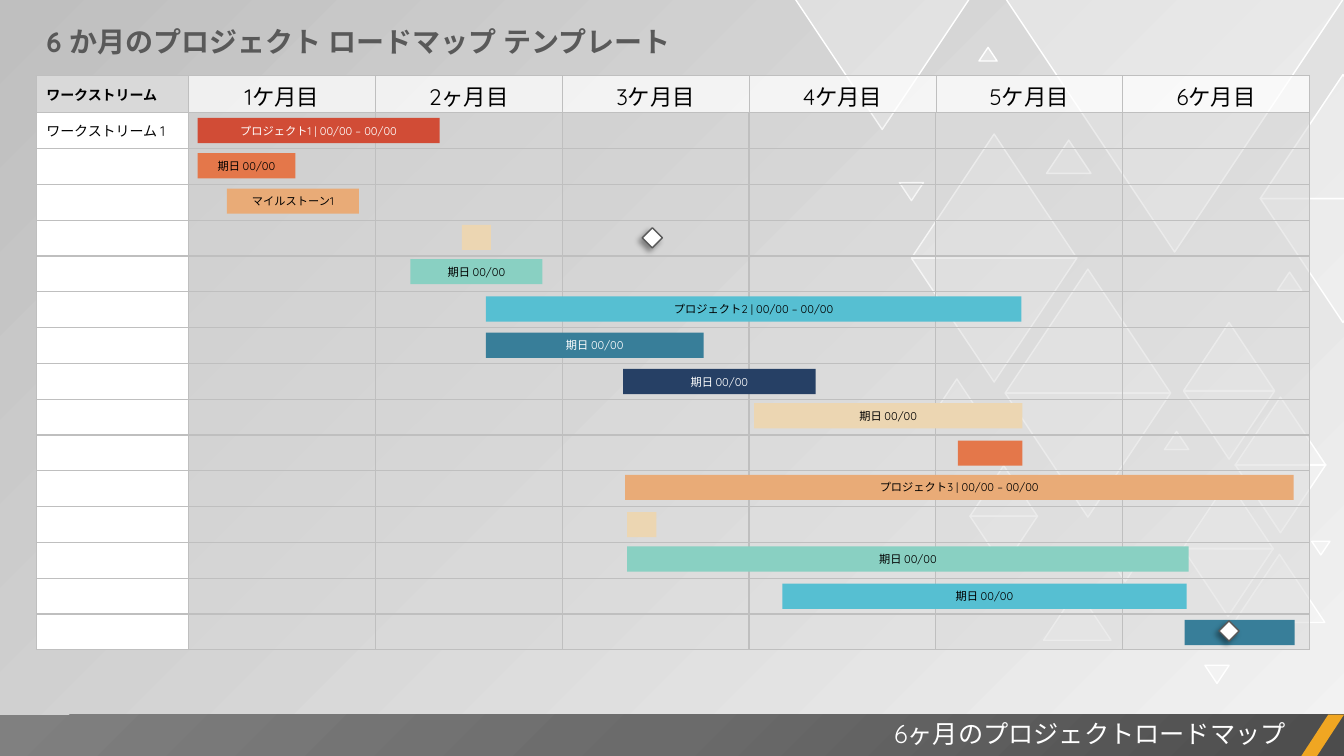
from copy import deepcopy
from dataclasses import dataclass

from lxml.etree import SubElement
from pptx import Presentation
from pptx.dml.color import RGBColor
from pptx.enum.shapes import MSO_SHAPE
from pptx.enum.text import MSO_ANCHOR, MSO_AUTO_SIZE, PP_ALIGN
from pptx.oxml.ns import qn
from pptx.util import Inches, Pt


@dataclass(frozen=True)
class Theme:
    font: str = "Quicksand"
    white: str = "FFFFFF"
    black: str = "000000"
    title: str = "595959"
    grid: str = "BFBFBF"
    cell: str = "D9D9D9"
    page_light: str = "F2F2F2"
    footer: tuple = ("4C4C4C", "6B6B6B", "808080")
    accent: str = "F0A622"
    red: str = "D14C36"
    orange: str = "E4774A"
    apricot: str = "E9AB77"
    sand: str = "ECD6B2"
    mint: str = "89D0C2"
    sky: str = "56BFD2"
    teal: str = "387E99"
    navy: str = "264065"
    title_size: int = 20
    footer_size: int = 18
    month_size: int = 16
    label_size: int = 10
    bar_size: int = 8


THEME = Theme()
MONTHS = ["1ケ月目", "2ヶ月目", "3ケ月目", "4ケ月目", "5ケ月目", "6ケ月目"]
MONTH_OPACITY = [50, 50, 25, 25, 50, 50]
WORKSTREAMS = 15
DUE = "期日 00/00"

# left, top, width, colour, label, label colour
BARS = [
    (1.96, 1.17, 2.4, THEME.red, "プロジェクト1 | 00/00 – 00/00", THEME.white),
    (1.96, 1.52, 0.97, THEME.orange, DUE, THEME.black),
    (2.25, 1.87, 1.31, THEME.apricot, "マイルストーン1", THEME.black),
    (4.58, 2.23, 0.29, THEME.sand, "", THEME.black),
    (4.07, 2.57, 1.31, THEME.mint, DUE, THEME.black),
    (4.82, 2.94, 5.31, THEME.sky, "プロジェクト2 | 00/00 – 00/00", THEME.black),
    (4.82, 3.3, 2.16, THEME.teal, DUE, THEME.white),
    (6.18, 3.66, 1.91, THEME.navy, DUE, THEME.white),
    (7.48, 4.0, 2.66, THEME.sand, DUE, THEME.black),
    (9.5, 4.37, 0.64, THEME.orange, "", THEME.black),
    (6.2, 4.71, 6.63, THEME.apricot, "プロジェクト3 | 00/00 – 00/00", THEME.black),
    (6.22, 5.08, 0.29, THEME.sand, "", THEME.black),
    (6.22, 5.42, 5.57, THEME.mint, DUE, THEME.black),
    (7.76, 5.79, 4.01, THEME.sky, DUE, THEME.black),
    (11.75, 6.15, 1.09, THEME.teal, "", THEME.black),
]
MILESTONES = [(6.37, 2.26), (12.09, 6.16)]

# left, top, width
UP_TRIANGLES = [
    (9.04, 1.33, 1.64), (9.97, 2.67, 1.64), (12.24, 5.5, 0.9), (11.73, 4.77, 0.9),
    (11.74, 3.2, 0.9), (12.25, 3.94, 0.9), (10.35, 5.85, 0.67), (9.62, 4.62, 0.67),
    (12.5, 0.74, 1.64), (9.27, 3.76, 0.44), (11.55, 4.28, 0.24), (12.67, 2.7, 0.24),
    (9.71, 0.47, 0.18), (10.38, 1.39, 0.44),
]
DOWN_TRIANGLES = [
    (9.04, 2.56, 1.64), (9.97, 3.9, 1.64), (9.97, -0.02, 3.36), (11.73, 5.44, 0.9),
    (11.74, 3.88, 0.9), (12.25, 4.61, 0.9), (9.62, 5.12, 0.67), (12.5, 1.97, 1.64),
    (10.94, 5.44, 0.44), (11.95, 6.6, 0.24), (8.92, 1.81, 0.24), (13.01, 5.37, 0.18),
    (7.88, -0.02, 1.74),
]


def rgb(color):
    return RGBColor.from_string(color)


def set_opacity(element, percent):
    """Make the first colour inside the element translucent."""
    color = element.find(f".//{qn('a:srgbClr')}")
    SubElement(color, qn("a:alpha"), val=str(percent * 1000))


def write(frame, text, size, color, align=PP_ALIGN.LEFT, bold=False):
    frame.vertical_anchor = MSO_ANCHOR.MIDDLE
    paragraph = frame.paragraphs[0]
    paragraph.alignment = align
    run = paragraph.add_run()
    run.text = text
    run.font.name = THEME.font
    run.font.size = Pt(size)
    run.font.bold = bold
    run.font.color.rgb = rgb(color)


def add_solid(slide, preset, left, top, width, height, color, outline=None):
    shape = slide.shapes.add_shape(
        preset, Inches(left), Inches(top), Inches(width), Inches(height))
    shape.shadow.inherit = False
    shape.fill.solid()
    shape.fill.fore_color.rgb = rgb(color)
    if outline:
        shape.line.color.rgb = rgb(outline)
        shape.line.width = Pt(1)
    else:
        shape.line.fill.background()
    return shape


def paint_background(slide):
    fill = slide.background.fill
    fill.gradient()
    fill.gradient_angle = 135
    for stop, color in zip(fill.gradient_stops, (THEME.page_light, THEME.grid)):
        stop.color.rgb = rgb(color)
    set_opacity(slide.element, 40)


def add_triangle(slide, left, top, width, rotation):
    triangle = add_solid(slide, MSO_SHAPE.ISOSCELES_TRIANGLE, left, top,
                         width, width * 0.75, THEME.white, THEME.white)
    triangle.rotation = rotation
    set_opacity(triangle.element, 30)


def add_footer(slide):
    band = add_solid(slide, MSO_SHAPE.RECTANGLE, 0, 7.09, 13.33, 0.42, THEME.footer[0])
    band.fill.gradient()
    gradient = band.element.spPr.find(qn("a:gradFill"))
    stops = gradient.find(qn("a:gsLst"))
    middle = deepcopy(stops[0])
    middle.set("pos", "50000")
    stops.insert(1, middle)
    for stop, color in zip(band.fill.gradient_stops, THEME.footer):
        stop.color.rgb = rgb(color)
    gradient.remove(gradient.find(qn("a:lin")))
    radial = SubElement(gradient, qn("a:path"), path="circle")
    SubElement(radial, qn("a:fillToRect"), l="100000", t="100000")

    slash = add_solid(slide, MSO_SHAPE.PARALLELOGRAM, 12.9, 7.09, 0.43, 0.42, THEME.accent)
    slash.adjustments[0] = 0.652
    caption = slide.shapes.add_textbox(Inches(5.25), Inches(7.08), Inches(7.6), Inches(0.4))
    caption.text_frame.word_wrap = True
    write(caption.text_frame, "6ヶ月のプロジェクトロードマップ", THEME.footer_size,
          THEME.white, PP_ALIGN.RIGHT)


def style_cell(cell, color, opacity=100, edge=1):
    """Fill and frame a cell; edge is the width of all but its bottom border."""
    cell.margin_top = cell.margin_bottom = 0
    cell.fill.solid()
    cell.fill.fore_color.rgb = rgb(color)
    properties = cell._tc.tcPr
    if opacity < 100:
        set_opacity(properties, opacity)
    for index, side in enumerate(("lnL", "lnR", "lnT", "lnB")):
        width = Pt(1 if side == "lnB" else edge)
        border = SubElement(properties, qn(f"a:{side}"), w=str(width))
        line_fill = SubElement(border, qn("a:solidFill"))
        SubElement(line_fill, qn("a:srgbClr"), val=THEME.grid)
        properties.insert(index, border)


def write_cell(cell, text, size, **style):
    write(cell.text_frame, text, size, THEME.black, **style)
    cell.vertical_anchor = MSO_ANCHOR.MIDDLE


def add_roadmap_grid(slide):
    grid = slide.shapes.add_table(
        WORKSTREAMS + 1, len(MONTHS) + 1,
        Inches(0.36), Inches(0.75), Inches(12.63), Inches(5.7)).table
    grid.first_row = grid.horz_banding = False
    for index, column in enumerate(grid.columns):
        column.width = Inches(1.51 if index == 0 else (12.63 - 1.51) / len(MONTHS))
    for index, row in enumerate(grid.rows):
        row.height = Inches(0.37 if index == 0 else (5.7 - 0.37) / WORKSTREAMS)

    style_cell(grid.cell(0, 0), THEME.cell, edge=0.5)
    write_cell(grid.cell(0, 0), "ワークストリーム", THEME.label_size, bold=True)
    for column, month in enumerate(MONTHS, 1):
        heading = grid.cell(0, column)
        style_cell(heading, THEME.white, 75, edge=0.5)
        heading.margin_top = Inches(0.04)
        write_cell(heading, month, THEME.month_size, align=PP_ALIGN.CENTER)
    for row in range(1, WORKSTREAMS + 1):
        style_cell(grid.cell(row, 0), THEME.white)
        for column, opacity in enumerate(MONTH_OPACITY, 1):
            style_cell(grid.cell(row, column), THEME.cell, opacity)
    write_cell(grid.cell(1, 0), "ワークストリーム 1", THEME.label_size)


def add_bar(slide, left, top, width, color, label, label_color):
    bar = add_solid(slide, MSO_SHAPE.RECTANGLE, left, top, width, 0.25, color)
    if label:
        frame = bar.text_frame
        frame.margin_top = frame.margin_bottom = 0
        write(frame, label, THEME.bar_size, label_color, PP_ALIGN.CENTER)


def add_milestone(slide, left, top):
    marker = add_solid(slide, MSO_SHAPE.DIAMOND, left, top, 0.2, 0.2, THEME.white, THEME.title)
    effects = marker.element.spPr.find(qn("a:effectLst"))
    shadow = SubElement(effects, qn("a:outerShdw"), blurRad=str(Pt(4)),
                        dist=str(Pt(3)), dir=str(135 * 60000))
    SubElement(shadow, qn("a:srgbClr"), val=THEME.black)
    set_opacity(shadow, 40)


def add_title(slide):
    title = slide.shapes.title
    title.left, title.top = Inches(0.36), Inches(0.19)
    title.width, title.height = Inches(7.99), Inches(0.44)
    title.text_frame.auto_size = MSO_AUTO_SIZE.NONE
    write(title.text_frame, "6 か月のプロジェクト ロードマップ テンプレート",
          THEME.title_size, THEME.title, bold=True)


def main():
    deck = Presentation()
    deck.slide_width, deck.slide_height = Inches(13.33), Inches(7.5)
    slide = deck.slides.add_slide(deck.slide_layouts.get_by_name("Title Only"))
    paint_background(slide)
    add_title(slide)
    for triangles, rotation in ((UP_TRIANGLES, 0), (DOWN_TRIANGLES, 180)):
        for triangle in triangles:
            add_triangle(slide, *triangle, rotation)
    add_footer(slide)
    add_roadmap_grid(slide)
    for bar in BARS:
        add_bar(slide, *bar)
    for milestone in MILESTONES:
        add_milestone(slide, *milestone)
    deck.save("out.pptx")


if __name__ == "__main__":
    main()
